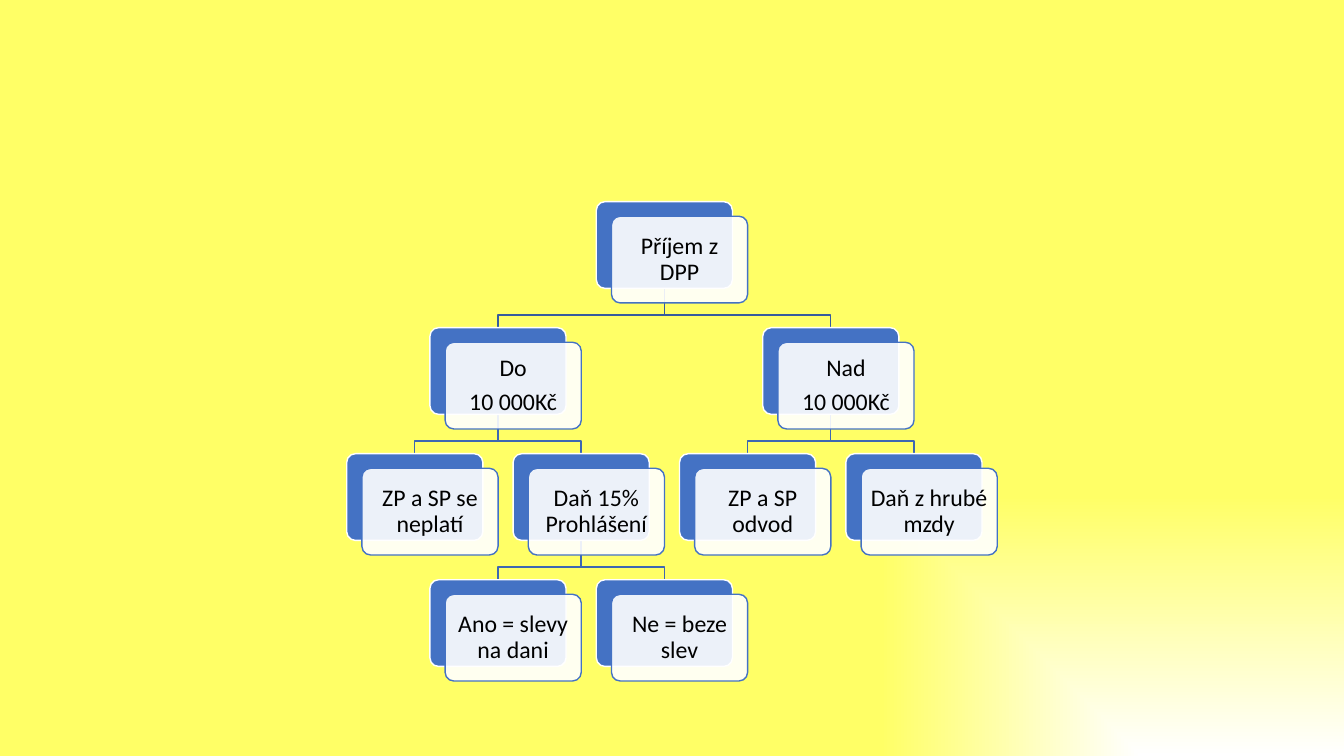
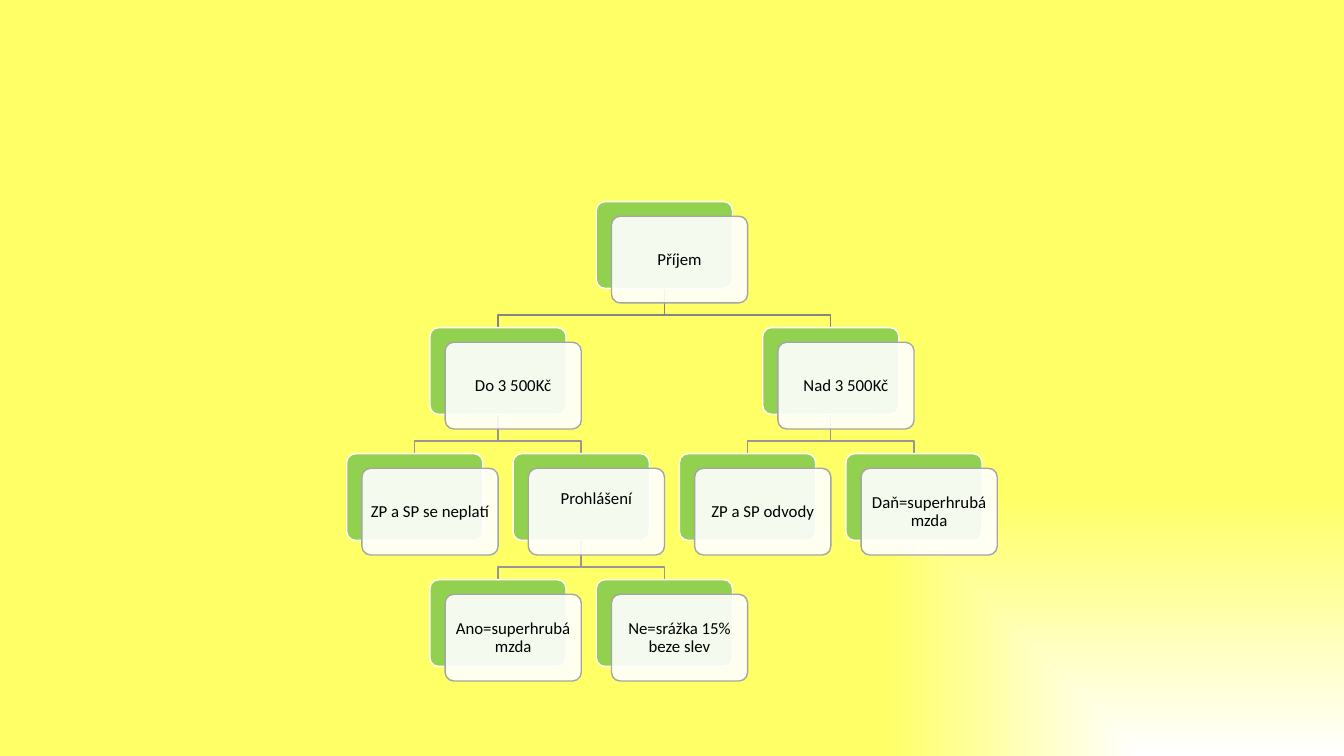
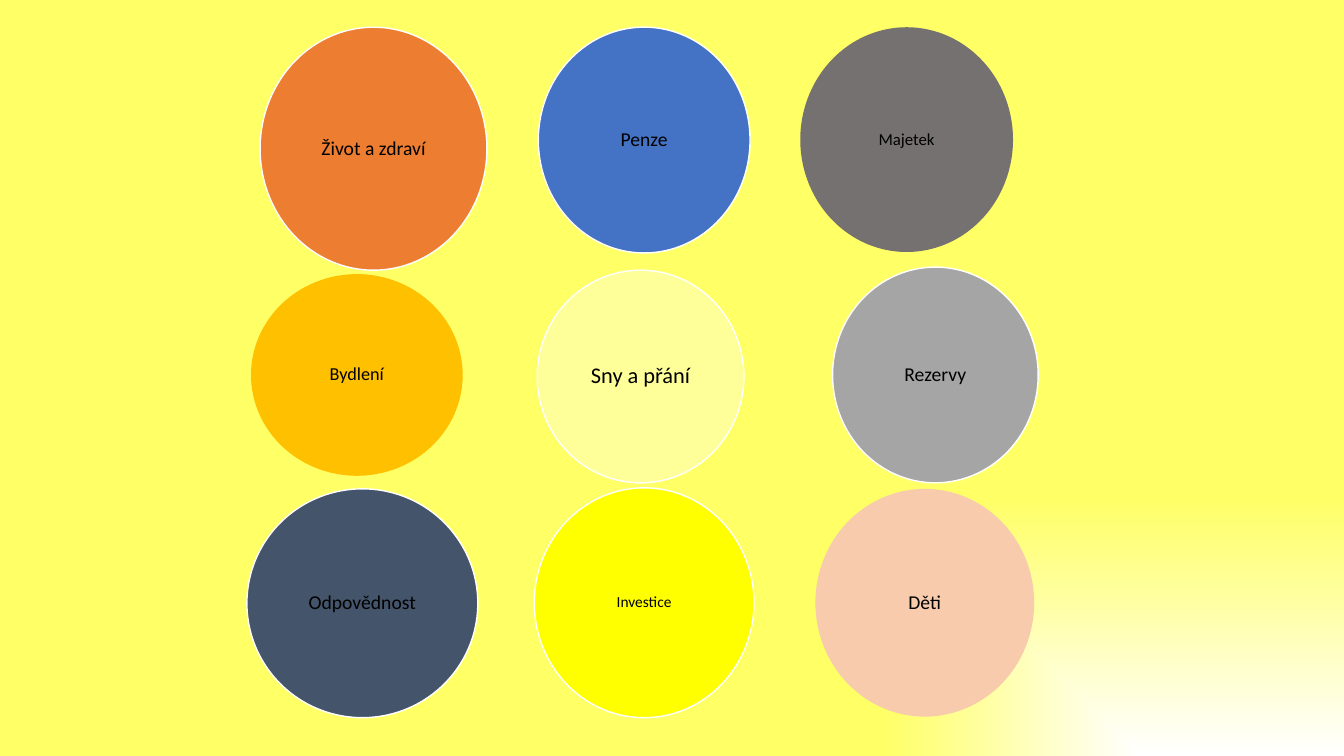
from lxml import etree
from pptx import Presentation
from pptx.dml.color import RGBColor
from pptx.enum.shapes import MSO_SHAPE
from pptx.enum.text import MSO_ANCHOR, PP_ALIGN
from pptx.oxml.ns import qn
from pptx.util import Inches, Pt

ROUNDED, OVAL = MSO_SHAPE.ROUNDED_RECTANGLE, MSO_SHAPE.OVAL
MIDDLE, CENTER = MSO_ANCHOR.MIDDLE, PP_ALIGN.CENTER
FONT = "Calibri"
COLORS = {
    "white": "FFFFFF", "black": "000000", "page": "FFFF66",
    "ochre": "CCA014", "olive": "998028",
    "blue": "4472C4", "blue_trunk": "365B9D", "blue_branch": "3E67B2",
    "green": "92D050", "gray": "A5A5A5", "gray_trunk": "848484",
    "gray_branch": "969696", "stone": "767171", "orange": "ED7D31",
    "cream": "FFFF99", "gold": "FFC000", "yellow": "FFFF00",
    "peach": "F8CBAD", "slate": "44546A",
}
BACKGROUND_STOPS = [("white", 0), ("ochre", 0), ("olive", 0),
                    ("white", 0), ("white", 0), ("page", 69)]

# Shares of the slide's width and height, in percent.
FIRST_COLUMN, COLUMN_STEP = 25.8, 6.19
FIRST_ROW, ROW_STEP = 26.67, 16.67
CARD_WIDTH, CARD_HEIGHT = 10.13, 11.47
FRONT_SHIFT_X, FRONT_SHIFT_Y = 1.13, 1.93
BEND_DROP = 3.53

# Column, row and index of the parent of every node.
TREE = [(3, 0, None), (1, 1, 0), (5, 1, 0), (0, 2, 1), (2, 2, 1),
        (4, 2, 2), (6, 2, 2), (1, 3, 4), (3, 3, 4)]
AGREEMENT_LABELS = [
    "Příjem z DPP", "Do\n10 000Kč", "Nad\n10 000Kč", "ZP a SP se neplatí",
    "Daň 15% Prohlášení", "ZP a SP odvod", "Daň z hrubé mzdy",
    "Ano = slevy na dani", "Ne = beze slev"]
INCOME_LABELS = [
    "Příjem", "Do 3 500Kč", "Nad 3 500Kč", "ZP a SP se neplatí",
    "Prohlášení", "ZP a SP odvody", "Daň=superhrubá mzda",
    "Ano=superhrubá mzda", "Ne=srážka 15% beze slev"]
# Label, centre, size, fill, text size, whether it has an outline.
NEEDS = [
    ("Penze", 47.93, 18.53, 15.75, 29.87, "blue", 14, True),
    ("Majetek", 67.46, 18.47, 15.83, 29.73, "stone", 12, False),
    ("Život a zdraví", 27.79, 19.67, 16.88, 32.13, "orange", 14, True),
    ("Sny a přání", 47.66, 49.8, 15.38, 28.13, "cream", 16, True),
    ("Bydlení", 26.55, 49.6, 15.75, 26.67, "gold", 13, False),
    ("Rezervy", 69.6, 49.6, 15.3, 28.53, "gray", 14, True),
    ("Investice", 47.93, 79.73, 16.35, 30.4, "yellow", 11, True),
    ("Děti", 68.81, 79.73, 16.28, 30.13, "peach", 14, False),
    ("Odpovědnost", 26.96, 79.8, 17.18, 30.27, "slate", 14, True),
]


def rgb(name):
    return RGBColor.from_string(COLORS[name])


def write(shape, text, size=12, color="black", inset=0.05, lift=0.0):
    frame = shape.text_frame
    frame.word_wrap = True
    frame.vertical_anchor = MIDDLE
    frame.margin_left = frame.margin_right = frame.margin_top = Inches(inset)
    frame.margin_bottom = Inches(inset + lift)
    for index, line in enumerate(text.split("\n")):
        paragraph = frame.add_paragraph() if index else frame.paragraphs[0]
        paragraph.alignment = CENTER
        paragraph.line_spacing = 0.9
        paragraph.space_before = Pt(6 if index else 0)
        run = paragraph.add_run()
        run.text = line
        run.font.name, run.font.size = FONT, Pt(size)
        run.font.color.rgb = rgb(color)


class Deck:
    """Holds the shared style and the current slide."""

    def __init__(self):
        self.prs = Presentation()
        self.prs.slide_width, self.prs.slide_height = Inches(13.33), Inches(7.5)
        self.slide = None
        self.paint_background()

    def paint_background(self):
        master = self.prs.slide_master
        master.background.fill.gradient()
        gradient = master.element.find(".//" + qn("a:gradFill"))
        for child in list(gradient):
            gradient.remove(child)
        stops = etree.SubElement(gradient, qn("a:gsLst"))
        for name, percent in BACKGROUND_STOPS:
            stop = etree.SubElement(stops, qn("a:gs"), pos=str(percent * 1000))
            etree.SubElement(stop, qn("a:srgbClr"), val=COLORS[name])
        shade = etree.SubElement(gradient, qn("a:path"), path="rect")
        etree.SubElement(shade, qn("a:fillToRect"), l="100000", t="100000")

    def new_slide(self):
        self.slide = self.prs.slides.add_slide(self.prs.slide_layouts[6])

    def x(self, percent):
        return round(self.prs.slide_width * percent / 100)

    def y(self, percent):
        return round(self.prs.slide_height * percent / 100)

    def shape(self, kind, left, top, width, height, fill, line=None, opacity=100):
        shape = self.slide.shapes.add_shape(
            kind, self.x(left), self.y(top), self.x(width), self.y(height))
        shape.shadow.inherit = False
        shape.fill.solid()
        shape.fill.fore_color.rgb = rgb(fill)
        if opacity < 100:
            color = shape.fill._xPr.find(".//" + qn("a:srgbClr"))
            etree.SubElement(color, qn("a:alpha"), val=str(opacity * 1000))
        if line:
            shape.line.color.rgb = rgb(line)
            shape.line.width = Pt(1)
        else:
            shape.line.fill.background()
        return shape

    def branch(self, parent, child, color):
        (start_x, parent_top), (end_x, end_y) = parent, child
        start_x, end_x = (x + CARD_WIDTH / 2 for x in (start_x, end_x))
        start_y = parent_top + CARD_HEIGHT
        bend_y = start_y + BEND_DROP
        points = [(self.x(px), self.y(py)) for px, py in
                  ((start_x, bend_y), (end_x, bend_y), (end_x, end_y))]
        builder = self.slide.shapes.build_freeform(self.x(start_x), self.y(start_y))
        builder.add_line_segments(points, close=False)
        elbow = builder.convert_to_shape()
        elbow.shadow.inherit = False
        elbow.fill.background()
        elbow.line.color.rgb = rgb(color)
        elbow.line.width = Pt(1)

    def node(self, corner, label, back, outline, **text_format):
        left, top = corner
        front_corner = left + FRONT_SHIFT_X, top + FRONT_SHIFT_Y
        size = CARD_WIDTH, CARD_HEIGHT
        shadow_card = self.shape(ROUNDED, *corner, *size, back, "white")
        card = self.shape(ROUNDED, *front_corner, *size, "white", outline, 90)
        for part in (shadow_card, card):
            part.adjustments[0] = 0.1
        write(card, label, **text_format)

    def tree(self, labels, back, outline, trunk, twig, lifts=None, **text_format):
        self.new_slide()
        corners = [(FIRST_COLUMN + column * COLUMN_STEP, FIRST_ROW + row * ROW_STEP)
                   for column, row, _ in TREE]
        for corner, (_, row, parent) in zip(corners, TREE):
            if parent is not None:
                self.branch(corners[parent], corner, trunk if row == 1 else twig)
        for corner, label in zip(corners, labels):
            lift = (lifts or {}).get(label, 0)
            self.node(corner, label, back, outline, lift=lift, **text_format)

    def circle(self, label, center_x, center_y, width, height, fill, size, outlined):
        oval = self.shape(OVAL, center_x - width / 2, center_y - height / 2,
                          width, height, fill, "white" if outlined else None)
        write(oval, label, size=size)


def main():
    deck = Deck()
    deck.tree(AGREEMENT_LABELS, "blue", "blue", "blue_trunk", "blue_branch",
              size=17, inset=0.07)
    deck.tree(INCOME_LABELS, "green", "gray", "gray_trunk", "gray_branch",
              lifts={"Prohlášení": 0.24}, size=12)
    deck.new_slide()
    for need in NEEDS:
        deck.circle(*need)
    deck.prs.save("out.pptx")


if __name__ == "__main__":
    main()
